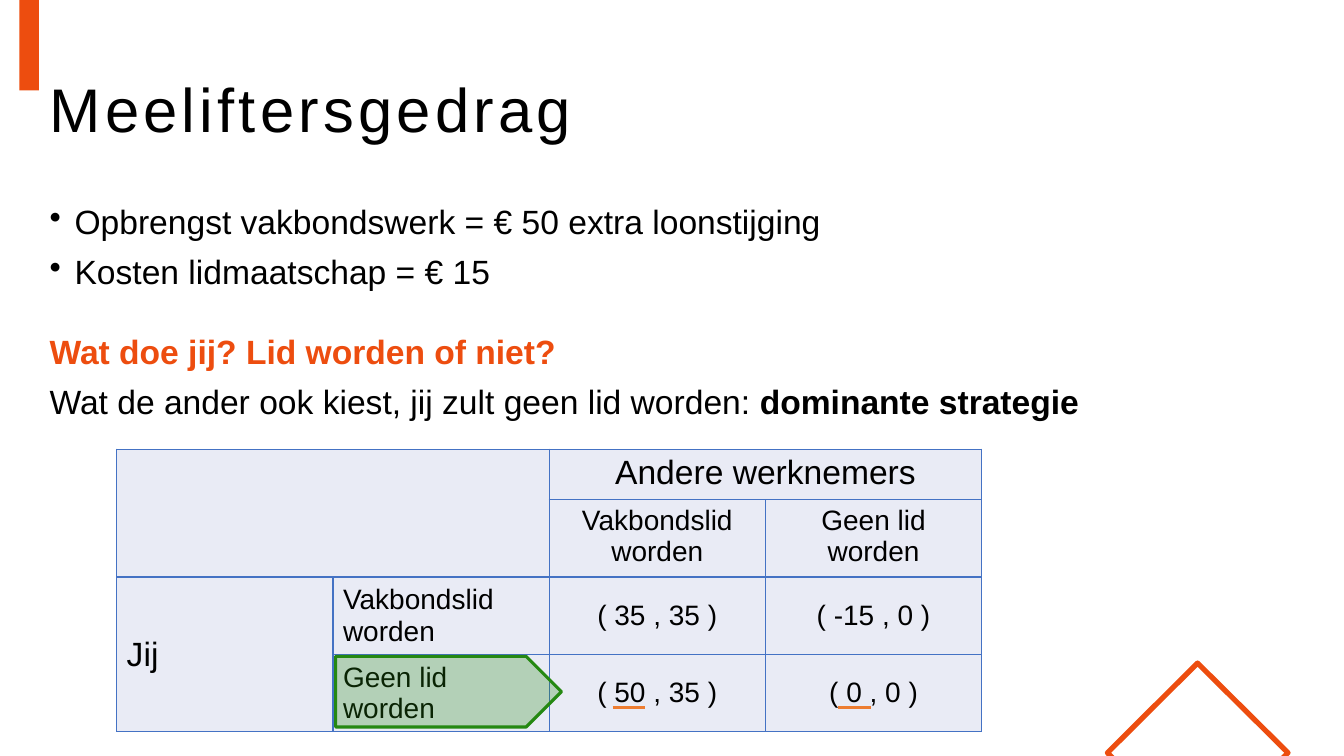
from dataclasses import dataclass

from lxml import etree
from pptx import Presentation
from pptx.dml.color import RGBColor
from pptx.enum.shapes import MSO_CONNECTOR, MSO_SHAPE
from pptx.enum.text import MSO_ANCHOR, PP_ALIGN
from pptx.oxml.ns import qn
from pptx.util import Cm, Pt

LINE = MSO_CONNECTOR.STRAIGHT
RECT, ARROW = MSO_SHAPE.RECTANGLE, MSO_SHAPE.PENTAGON
TOP, MIDDLE = MSO_ANCHOR.TOP, MSO_ANCHOR.MIDDLE
LEFT, CENTER = PP_ALIGN.LEFT, PP_ALIGN.CENTER


@dataclass(frozen=True)
class Theme:
    """Colours, font and type sizes of the slide."""
    font: str = "Arial"
    ink: str = "000000"
    accent: str = "ED4D0F"
    mark: str = "ED7D31"
    green: str = "258812"
    grid: str = "4472C4"
    cell: str = "E9EBF5"
    title: int = 44
    body: int = 24
    small: int = 20


THEME = Theme()


def rgb(code):
    """Turn a hex code into a colour."""
    return RGBColor.from_string(code)


def style(para, size, color=THEME.ink, bold=None):
    """Set the font of a paragraph."""
    font = para.font
    font.name, font.size, font.bold = THEME.font, Pt(size), bold
    font.color.rgb = rgb(color)


def add_box(slide, left, top, width, height, anchor=TOP):
    """Add a wrapping text box and return its frame."""
    frame = slide.shapes.add_textbox(Cm(left), Cm(top), Cm(width), Cm(height)).text_frame
    frame.word_wrap, frame.vertical_anchor = True, anchor
    return frame


def add_title(slide, text):
    """Add the letterspaced title."""
    para = add_box(slide, 1, 1, 32.03, 3.68, MIDDLE).paragraphs[0]
    para.line_spacing = 0.9
    run = para.add_run()
    run.text = text
    run._r.get_or_add_rPr().set("spc", "300")
    style(para, THEME.title)


def add_para(frame, parts, bullet=False, color=THEME.ink, bold=None, before=10):
    """Write one paragraph of (text, bold) parts in the body."""
    para = frame.paragraphs[0]
    if para.runs:
        para = frame.add_paragraph()
    para.line_spacing, para.space_before = 0.9, Pt(before)
    style(para, THEME.body, color, bold)
    for text, heavy in parts:
        run = para.add_run()
        run.text, run.font.bold = text, heavy
    if bullet:
        props = para._p.get_or_add_pPr()
        props.set("marL", str(Cm(0.63)))
        props.set("indent", str(-Cm(0.63)))
        mark = etree.Element(qn("a:buChar"), char="•")
        props.find(qn("a:defRPr")).addprevious(mark)


def add_body(slide):
    """Add the bullets, the question and the answer."""
    frame = add_box(slide, 1, 5.05, 32.03, 6)
    add_para(frame, [("Opbrengst vakbondswerk = € 50 extra loonstijging", None)], bullet=True)
    add_para(frame, [("Kosten lidmaatschap = € 15", None)], bullet=True)
    add_para(frame, [("Wat doe jij? Lid worden of niet?", None)],
             color=THEME.accent, bold=True, before=31)
    add_para(frame, [("Wat de ander ook kiest, jij zult geen lid worden: ", None),
                     ("dominante strategie", True)])


def frame_cell(cell):
    """Fill a cell and draw its four borders."""
    props = cell._tc.get_or_add_tcPr()
    for side in ("lnL", "lnR", "lnT", "lnB"):
        line = etree.SubElement(props, qn(f"a:{side}"), w=str(Pt(1)))
        fill = etree.SubElement(line, qn("a:solidFill"))
        etree.SubElement(fill, qn("a:srgbClr"), val=THEME.grid)
    cell.fill.solid()
    cell.fill.fore_color.rgb = rgb(THEME.cell)


def add_matrix(slide):
    """Add the payoff table."""
    join, skip = "Vakbondslid worden", "Geen lid worden"
    rows = [["", "", "Andere werknemers", ""],
            ["", "", join, skip],
            ["Jij", join, "( 35 , 35 )", "( -15 , 0 )"],
            ["", skip, "( 50 , 35 )", "( 0 , 0 )"]]
    heights = [1.19, 1.84, 1.94, 1.94]
    wide = 5.45
    table = slide.shapes.add_table(4, 4, Cm(2.94), Cm(11.32), Cm(4 * wide),
                                   Cm(sum(heights))).table
    table.first_row = table.horz_banding = False
    for col in table.columns:
        col.width = Cm(wide)
    for r, (texts, height) in enumerate(zip(rows, heights)):
        table.rows[r].height = Cm(height)
        for c, text in enumerate(texts):
            cell = table.cell(r, c)
            frame_cell(cell)
            cell.vertical_anchor = MIDDLE if r > 1 else TOP
            para = cell.text_frame.paragraphs[0]
            para.alignment = CENTER if c > 1 else LEFT
            style(para, THEME.body if r == 0 or c == 0 else THEME.small)
            if text:
                para.add_run().text = text
    for first, last in (((0, 0), (1, 1)), ((0, 2), (0, 3)), ((2, 0), (3, 0))):
        table.cell(*first).merge(table.cell(*last))


def add_bar(slide):
    """Add the accent bar at the top left."""
    bar = slide.shapes.add_shape(RECT, Cm(0.49), Cm(-0.64), Cm(0.49), Cm(2.92))
    bar.shadow.inherit = False
    bar.fill.solid()
    bar.fill.fore_color.rgb = rgb(THEME.accent)
    bar.line.fill.background()


def add_roof(slide):
    """Add the outlined peak at the bottom right."""
    points = [(32.23, 19.2), (28.14, 19.2), (27.91, 18.97), (30.18, 16.71), (32.46, 18.97)]
    spots = [(Cm(x), Cm(y)) for x, y in points]
    pen = slide.shapes.build_freeform(*spots[0])
    pen.add_line_segments(spots[1:], close=True)
    roof = pen.convert_to_shape()
    roof.shadow.inherit = False
    roof.fill.background()
    roof.line.color.rgb, roof.line.width = rgb(THEME.accent), Pt(3.75)


def add_dash(slide, left):
    """Underline one payoff in the bottom row."""
    dash = slide.shapes.add_connector(LINE, Cm(left), Cm(17.83), Cm(left + 0.81), Cm(17.83))
    dash.line.color.rgb, dash.line.width = rgb(THEME.mark), Pt(2.25)
    etree.SubElement(dash._element.spPr, qn("a:effectLst"))


def add_arrow(slide):
    """Add the see-through arrow over the dominant choice."""
    arrow = slide.shapes.add_shape(ARROW, Cm(8.46), Cm(16.54), Cm(5.69), Cm(1.78))
    arrow.shadow.inherit = False
    arrow.fill.solid()
    arrow.fill.fore_color.rgb = rgb(THEME.green)
    color = arrow._element.spPr.find(qn("a:solidFill")).find(qn("a:srgbClr"))
    etree.SubElement(color, qn("a:alpha"), val="27000")
    arrow.line.color.rgb, arrow.line.width = rgb(THEME.green), Pt(2.25)


def main():
    """Build and save the slide."""
    deck = Presentation()
    deck.slide_width, deck.slide_height = Cm(33.87), Cm(19.05)
    slide = deck.slides.add_slide(deck.slide_layouts[6])
    add_bar(slide)
    add_roof(slide)
    add_title(slide, "Meeliftersgedrag")
    add_body(slide)
    add_matrix(slide)
    for left in (15.44, 21.13):
        add_dash(slide, left)
    add_arrow(slide)
    deck.save("out.pptx")


if __name__ == "__main__":
    main()
